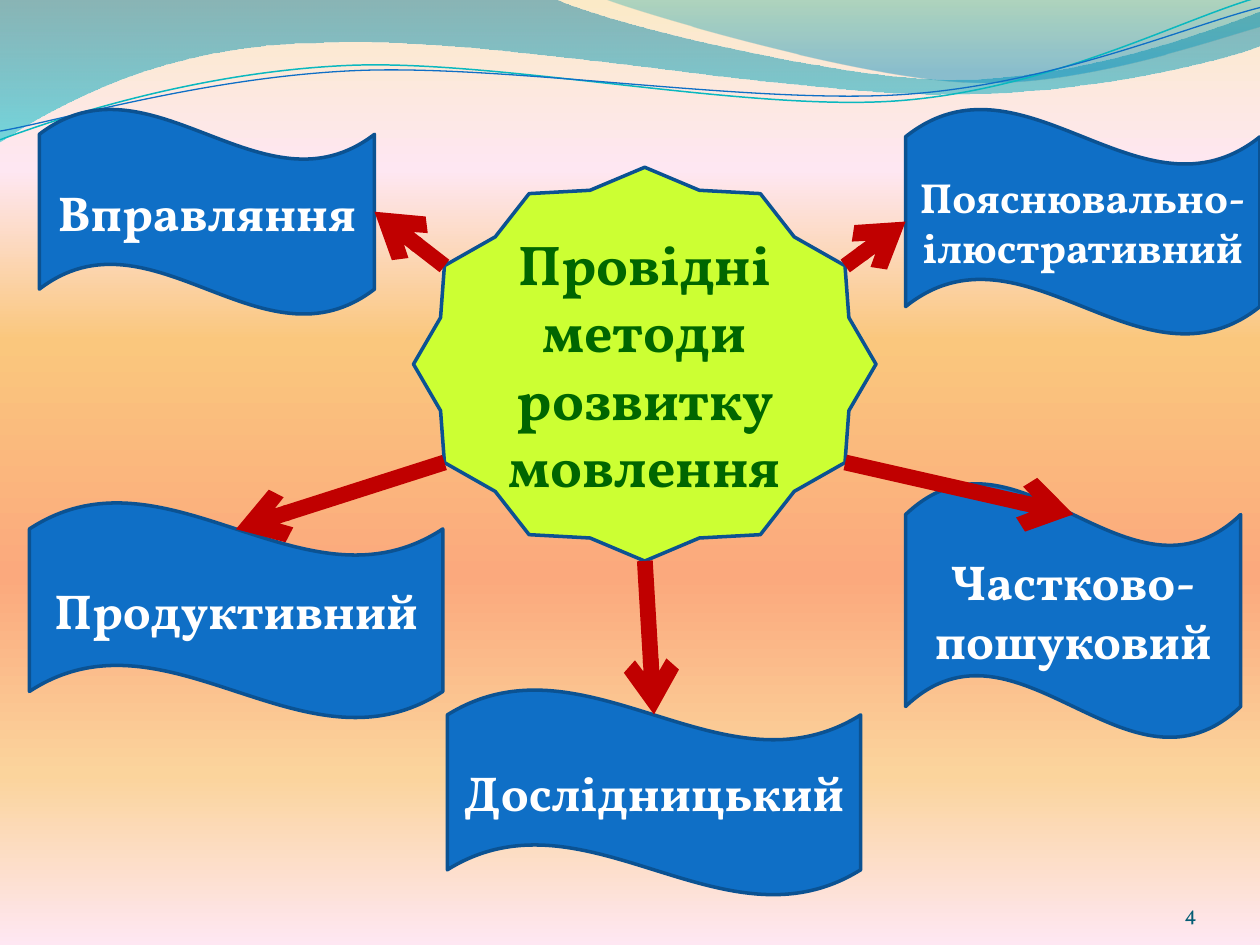
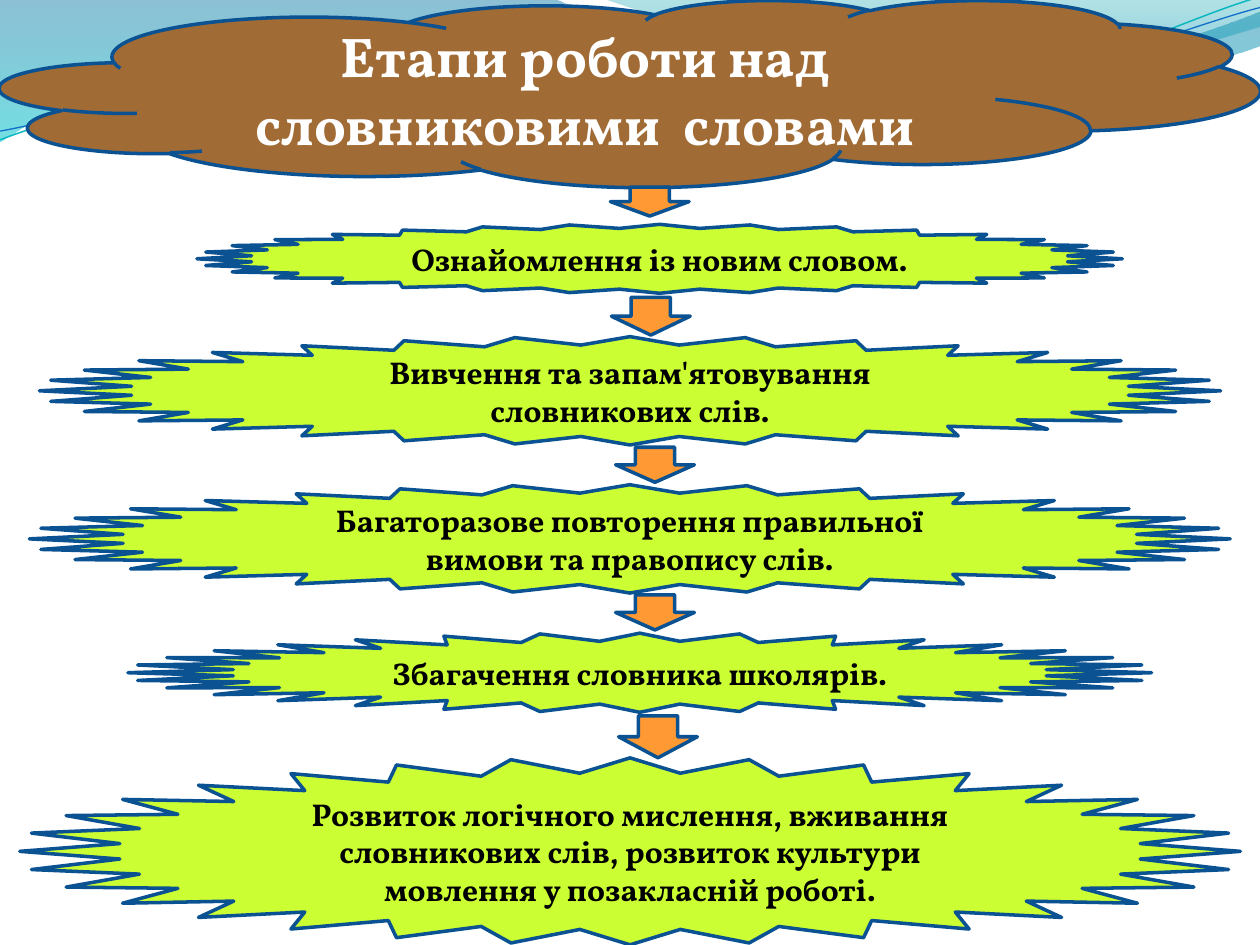
from lxml import etree
from pptx import Presentation
from pptx.dml.color import RGBColor
from pptx.enum import shapes, text
from pptx.oxml.ns import qn
from pptx.util import Pt

FONT = "Vollkorn"
WHITE = RGBColor(0xFF, 0xFF, 0xFF)
BLACK = RGBColor(0x00, 0x00, 0x00)
LIME = RGBColor(0xCC, 0xFF, 0x33)
DARK_GREEN = RGBColor(0x00, 0x66, 0x00)
BLUE = RGBColor(0x0F, 0x6F, 0xC6)
NAVY = RGBColor(0x0B, 0x52, 0x92)
TEAL = RGBColor(0x0A, 0xB8, 0xBF)
PETROL = RGBColor(0x04, 0x5D, 0x75)
RED = RGBColor(0xC0, 0x00, 0x00)
BROWN = RGBColor(0xA1, 0x6B, 0x35)
ORANGE = RGBColor(0xFF, 0x99, 0x33)

# Gradient stops: position, colour, opacity (position and opacity in percent)
SUNSET = [
    (0, RGBColor(0xFB, 0xEA, 0xC7), 100),
    (18, RGBColor(0xFE, 0xE7, 0xF2), 100),
    (36, RGBColor(0xFA, 0xC7, 0x7D), 100),
    (61, RGBColor(0xFB, 0xA9, 0x7D), 100),
    (82, RGBColor(0xFB, 0xD4, 0x9C), 100),
    (100, RGBColor(0xFE, 0xE7, 0xF2), 100),
]
WIDE_BAND_STOPS = [(0, RGBColor(0x00, 0x74, 0xA1), 45),
                   (100, RGBColor(0x00, 0xC6, 0xCF), 55)]
RIGHT_BAND_STOPS = [(0, RGBColor(0x00, 0xA1, 0xA9), 30),
                    (80, RGBColor(0x00, 0x8B, 0xBF), 45)]

# Each curve: a start point, then two control points and an end point per piece
WIDE_BAND = [
    [(0, -0.7)],
    [(316.8, -0.7), (342.7, 12.2), (478.1, 45.4), (545.8, 45.4),
     (614.2, 45.4), (689.8, 18.7), (720, 6.5)],
    [(720.7, 25.9), (707.8, 31.7), (626.4, 54.7), (537.1, 54),
     (447.8, 54), (275, 20.2), (185, 24.5),
     (92.9, 25.2), (33.1, 59.8), (-0.7, 81.4)],
]
RIGHT_BAND = [
    [(344.9, -0.7), (366.5, 7.9), (491, 44.6), (553.7, 46.8),
     (616.3, 49.7), (691.9, 23), (720, 15.1)],
    [(720, 0)],
]
TEAL_STRAND = [
    [(0, 79.9), (34.6, 67), (113.8, 41), (199.4, 37.4),
     (284.4, 33.8), (427, 64.1), (513.4, 57.6),
     (599.8, 51.1), (675.4, 10.8), (718.6, -1.4)],
]
BLUE_STRAND = [
    [(0, 74.9), (33.8, 69.1), (118.1, 43.9), (203.8, 40.3),
     (290.2, 36.7), (429.8, 59.8), (516.2, 54),
     (601.9, 48.2), (677.5, 15.1), (720, 4.3)],
]


def bend(shape, curves):
    """Turn the straight segments within each curve into cubic Bezier pieces."""
    segments = list(shape.element.iter(qn("a:lnTo")))
    first = 0
    for curve in curves:
        for start in range(first, first + len(curve) - 1, 3):
            piece = segments[start:start + 3]
            cubic = etree.Element(qn("a:cubicBezTo"))
            piece[0].addprevious(cubic)
            for segment in piece:
                cubic.append(segment[0])
                segment.getparent().remove(segment)
        first += len(curve)


def set_gradient(fill, element, stops):
    """Give the fill inside element a gradient that runs from top to bottom."""
    fill.gradient()
    fill.gradient_angle = 270
    stop_list = next(element.iter(qn("a:gsLst")))
    for stop in list(stop_list):
        stop_list.remove(stop)
    for position, colour, opacity in stops:
        stop = etree.SubElement(stop_list, qn("a:gs"), pos=str(position * 1000))
        value = etree.SubElement(stop, qn("a:srgbClr"), val=str(colour))
        if opacity < 100:
            etree.SubElement(value, qn("a:alpha"), val=str(opacity * 1000))


def write(shape, words, size, colour, bold=True, align=text.PP_ALIGN.CENTER,
          anchor=text.MSO_ANCHOR.MIDDLE):
    frame = shape.text_frame
    frame.word_wrap = True
    frame.vertical_anchor = anchor
    paragraph = frame.paragraphs[0]
    paragraph.alignment = align
    run = paragraph.add_run()
    run.text = words
    run.font.name = FONT
    run.font.size = Pt(size)
    run.font.bold = bold
    run.font.color.rgb = colour


class Deck:
    def __init__(self):
        self.presentation = Presentation()
        self.presentation.slide_width = Pt(720)
        self.presentation.slide_height = Pt(540)
        self.layout = self.presentation.slide_layouts[6]
        self.slide = None

    def new_slide(self, background_stops=None):
        self.slide = self.presentation.slides.add_slide(self.layout)
        fill = self.slide.background.fill
        if background_stops:
            set_gradient(fill, self.slide.element, background_stops)
        else:
            fill.solid()
            fill.fore_color.rgb = WHITE

    def decorate_layout(self):
        """Draw the bands and strands, then move them to the shared layout."""
        for placeholder in list(self.layout.placeholders):
            placeholder.element.getparent().remove(placeholder.element)
        decorations = [
            self.band(WIDE_BAND, WIDE_BAND_STOPS),
            self.band(RIGHT_BAND, RIGHT_BAND_STOPS),
            self.strand(TEAL_STRAND, TEAL, 0.85),
            self.strand(BLUE_STRAND, BLUE, 0.75),
        ]
        shape_tree = next(self.layout.element.iter(qn("p:spTree")))
        for shape in decorations:
            shape_tree.append(shape.element)

    def outline(self, curves, close):
        points = [(Pt(x), Pt(y)) for curve in curves for x, y in curve]
        builder = self.slide.shapes.build_freeform(*points[0])
        builder.add_line_segments(points[1:], close=close)
        shape = builder.convert_to_shape()
        bend(shape, curves)
        shape.shadow.inherit = False
        return shape

    def band(self, curves, stops):
        shape = self.outline(curves, close=True)
        set_gradient(shape.fill, shape.element, stops)
        shape.line.fill.background()
        return shape

    def strand(self, curves, colour, width):
        shape = self.outline(curves, close=False)
        shape.fill.background()
        shape.line.color.rgb = colour
        shape.line.width = Pt(width)
        return shape

    def shape(self, kind, box, colour, adjustment=None):
        shape = self.slide.shapes.add_shape(kind, *map(Pt, box))
        shape.shadow.inherit = False
        shape.fill.solid()
        shape.fill.fore_color.rgb = colour
        shape.line.color.rgb = NAVY
        shape.line.width = Pt(2)
        if adjustment is not None:
            shape.adjustments[0] = adjustment
        return shape

    def arrow(self, start, end):
        connector = self.slide.shapes.add_connector(
            shapes.MSO_CONNECTOR.STRAIGHT, *map(Pt, start + end))
        connector.line.color.rgb = RED
        connector.line.width = Pt(9)
        properties = connector.element.spPr
        etree.SubElement(properties.find(qn("a:ln")), qn("a:tailEnd"), type="arrow")
        etree.SubElement(properties, qn("a:effectLst"))

    def slide_number(self, number):
        box = self.slide.shapes.add_textbox(Pt(624.2), Pt(500.4), Pt(59.8), Pt(28.8))
        frame = box.text_frame
        frame.margin_left = frame.margin_top = frame.margin_right = frame.margin_bottom = 0
        write(box, number, 12, PETROL, bold=False, align=text.PP_ALIGN.RIGHT,
              anchor=text.MSO_ANCHOR.BOTTOM)


def add_methods_slide(deck):
    deck.new_slide(SUNSET)
    deck.decorate_layout()
    deck.slide_number("4")
    kinds = shapes.MSO_SHAPE
    hub = deck.shape(kinds.STAR_12_POINT, (236.3, 95.6, 264.3, 225), LIME, 0.457)
    write(hub, "Провідні методи розвитку мовлення", 32, DARK_GREEN)

    methods = [
        ("Вправляння", 28, (22.5, 62, 191.5, 118)),
        ("Пояснювально-ілюстративний", 24, (517.5, 62, 202.5, 129.4)),
        ("Частково-пошуковий", 28, (517.5, 275.8, 191.5, 146.2)),
        ("Продуктивний", 28, (16.8, 286.8, 236.2, 123.8)),
        ("Дослідницький", 28, (255.6, 393.8, 236.2, 118)),
    ]
    for name, size, box in methods:
        write(deck.shape(kinds.WAVE, box, BLUE), name, size, WHITE)

    hub_left, hub_right, hub_upper, hub_lower = 254, 483, 152, 264.3
    deck.arrow((hub_left, hub_upper), (214, 121))
    deck.arrow((hub_left, hub_lower), (134.8, 302.4))
    deck.arrow((hub_right, hub_upper), (517.5, 126.6))
    deck.arrow((hub_right, hub_lower), (613.4, 293.9))
    deck.arrow((368.5, 320.5), (373.7, 408.3))


def add_stages_slide(deck):
    deck.new_slide()
    kinds = shapes.MSO_SHAPE
    cloud = deck.shape(kinds.CLOUD, (0, 0, 720, 106.9), BROWN)
    write(cloud, "Етапи роботи над словниковими  словами", 32, WHITE)

    # Text, burst box, burst adjustment; then left, top and height of the arrow above
    stages = [
        ("Ознайомлення із новим словом.",
         (112.5, 128.2, 528.8, 39.4), 0.443, (348.8, 106.9, 16.6)),
        ("Вивчення та запам'ятовування словникових слів.",
         (22.5, 192.4, 675, 61.9), 0.424, (349.4, 169.9, 21.6)),
        ("Багаторазове повторення правильної вимови та правопису слів.",
         (16.8, 277, 686.2, 61.9), 0.424, (351.8, 255.6, 20)),
        ("Збагачення словника школярів.",
         (73.1, 361.8, 585, 45.2), 0.399, (351.8, 340, 20)),
        ("Розвиток логічного мислення, вживання словникових слів, "
         "розвиток культури мовлення у позакласній роботі.",
         (11.3, 433.1, 697.5, 106.8), 0.42, (353.5, 409, 24)),
    ]
    for stage, box, adjustment, _ in stages:
        write(deck.shape(kinds.STAR_32_POINT, box, LIME, adjustment), stage, 18, BLACK)
    for *_, (left, top, height) in stages:
        deck.shape(kinds.DOWN_ARROW, (left, top, 45, height), ORANGE)


def main():
    deck = Deck()
    add_methods_slide(deck)
    add_stages_slide(deck)
    deck.presentation.save("out.pptx")


if __name__ == "__main__":
    main()
